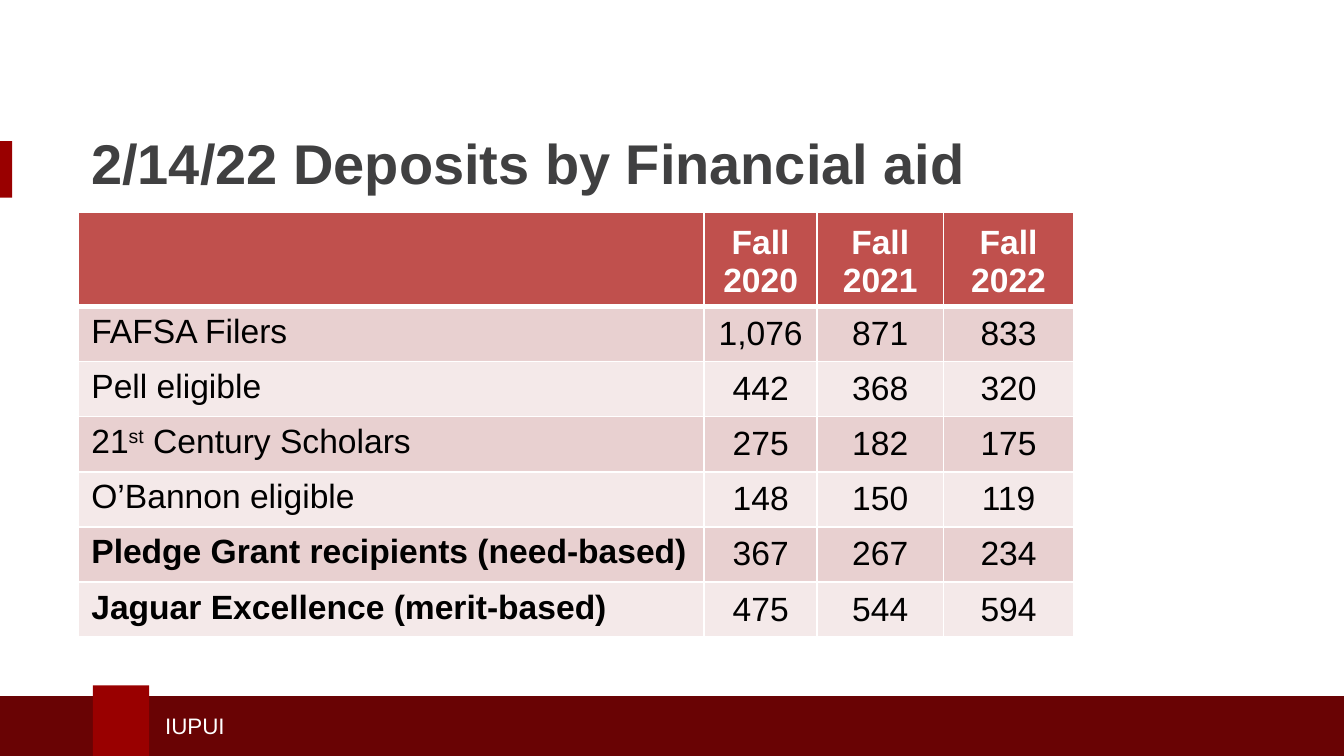
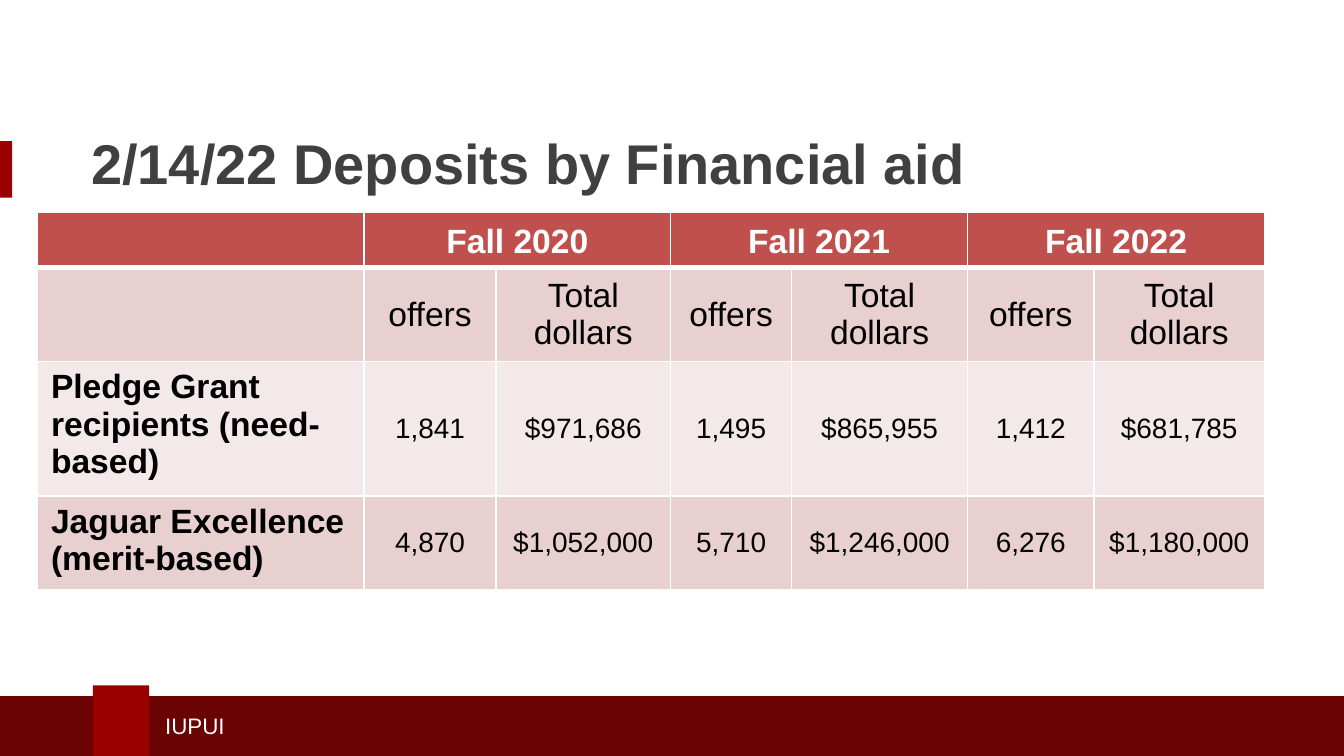
from lxml import etree
from pptx import Presentation
from pptx.dml.color import RGBColor
from pptx.enum import shapes, text
from pptx.oxml import ns
from pptx.util import Inches, Pt

CRIMSON = RGBColor(0x99, 0x00, 0x00)
DARK_CRIMSON = RGBColor(0x69, 0x03, 0x04)
CHARCOAL = RGBColor(0x40, 0x40, 0x41)
HEADER_RED = RGBColor(0xC0, 0x50, 0x4D)
ROW_DARK = RGBColor(0xE8, 0xD0, 0xD0)
ROW_LIGHT = RGBColor(0xF4, 0xE9, 0xE9)
WHITE = RGBColor(0xFF, 0xFF, 0xFF)
BLACK = RGBColor(0, 0, 0)

TITLE = "2/14/22 Deposits by Financial aid"
PLEDGE = "Pledge Grant recipients (need-based)"
JAGUAR = "Jaguar Excellence (merit-based)"
GRANTS = {PLEDGE, JAGUAR}
TERMS = ["Fall 2020", "Fall 2021", "Fall 2022"]

DEPOSITS = [
    ["", *TERMS],
    ["FAFSA Filers", "1,076", "871", "833"],
    ["Pell eligible", "442", "368", "320"],
    ["21^st^ Century Scholars", "275", "182", "175"],
    ["O’Bannon eligible", "148", "150", "119"],
    [PLEDGE, "367", "267", "234"],
    [JAGUAR, "475", "544", "594"],
]
OFFERS = [
    ["", *(cell for term in TERMS for cell in (term, None))],
    ["", *["offers", "Total dollars"] * len(TERMS)],
    [PLEDGE, "1,841", "$971,686", "1,495", "$865,955", "1,412", "$681,785"],
    [JAGUAR, "4,870", "$1,052,000", "5,710", "$1,246,000", "6,276", "$1,180,000"],
]


class Deck:
    font = "Arial"
    row_height = 0.41

    def __init__(self, width):
        self.prs = Presentation()
        self.prs.slide_width = Inches(width)
        self.prs.slide_height = Inches(width * 9 / 16)
        self.s = None

    def slide(self, title):
        self.s = self.prs.slides.add_slide(self.prs.slide_layouts[6])
        self.rect(0, 1.05, 0.09, 0.42, CRIMSON)
        self.rect(-0.03, 5.18, 10.09, 0.5, DARK_CRIMSON)
        self.rect(0.69, 5.1, 0.42, 0.58, CRIMSON)
        self.text(1.13, 5.25, 3.95, 0.3, "IUPUI", size=Pt(12), color=WHITE)
        self.text(0.58, 0.83, 8.75, 0.76, title, size=Pt(30), color=CHARCOAL, bold=True)

    def rect(self, x, y, w, h, color):
        sp = self.s.shapes.add_shape(
            shapes.MSO_SHAPE.RECTANGLE, Inches(x), Inches(y), Inches(w), Inches(h))
        sp.shadow.inherit = False
        sp.fill.solid()
        sp.fill.fore_color.rgb = color
        sp.line.fill.background()

    def text(self, x, y, w, h, content, **style):
        sp = self.s.shapes.add_textbox(Inches(x), Inches(y), Inches(w), Inches(h))
        tf = sp.text_frame
        tf.word_wrap = True
        tf.vertical_anchor = text.MSO_ANCHOR.MIDDLE
        self.runs(tf.paragraphs[0], content, **style)

    def runs(self, p, content, color=BLACK, **style):
        for i, piece in enumerate(content.split("^")):
            r = p.add_run()
            r.text = piece
            for name, value in {"name": self.font, "bold": False, **style}.items():
                setattr(r.font, name, value)
            r.font.color.rgb = color
            if i % 2:
                r._r.get_or_add_rPr().set("baseline", "30000")

    def borders(self, cell, bottom):
        tc_pr = cell._tc.get_or_add_tcPr()
        for i, (side, width) in enumerate(zip("LRTB", (1, 1, 1, bottom))):
            ln = etree.Element(ns.qn(f"a:ln{side}"), w=str(Pt(width)))
            fill = etree.SubElement(ln, ns.qn("a:solidFill"))
            etree.SubElement(fill, ns.qn("a:srgbClr"), val=str(WHITE))
            tc_pr.insert(i, ln)

    def table(self, x, y, height, widths, rows, value_size):
        frame = self.s.shapes.add_table(
            len(rows), len(widths), Inches(x), Inches(y),
            Inches(sum(widths)), Inches(height))
        table = frame.table
        for column, width in zip(table.columns, widths):
            column.width = Inches(width)
        for i, row in enumerate(rows):
            table.rows[i].height = Inches(self.row_height)
            for j, content in enumerate(row):
                self.cell(table.cell(i, j), i, j, content, value_size)
                if content is None:
                    table.cell(i, j - 1).merge(table.cell(i, j))
        frame.height = Inches(height)

    def cell(self, cell, i, j, content, value_size):
        header = i == 0
        cell.fill.solid()
        cell.fill.fore_color.rgb = HEADER_RED if header else ROW_DARK if i % 2 else ROW_LIGHT
        self.borders(cell, 3 if header else 1)
        if not content:
            return
        p = cell.text_frame.paragraphs[0]
        if j:
            p.alignment = text.PP_ALIGN.CENTER
            cell.vertical_anchor = text.MSO_ANCHOR.BOTTOM if header else text.MSO_ANCHOR.MIDDLE
        is_value = content[-1].isdigit() and not header
        self.runs(p, content, size=Pt(value_size if is_value else 18),
                  color=WHITE if header else BLACK,
                  bold=header or content in GRANTS)


def main():
    deck = Deck(10)
    deck.slide(TITLE)
    deck.table(0.58, 1.58, 3.13, [4.66, 0.84, 0.94, 0.97], DEPOSITS, value_size=18)
    deck.slide(TITLE)
    deck.table(0.28, 1.58, 2.81, [2.43, 0.98, 1.3, 0.9, 1.31, 0.94, 1.27], OFFERS,
               value_size=15)
    deck.prs.save("out.pptx")


if __name__ == "__main__":
    main()
